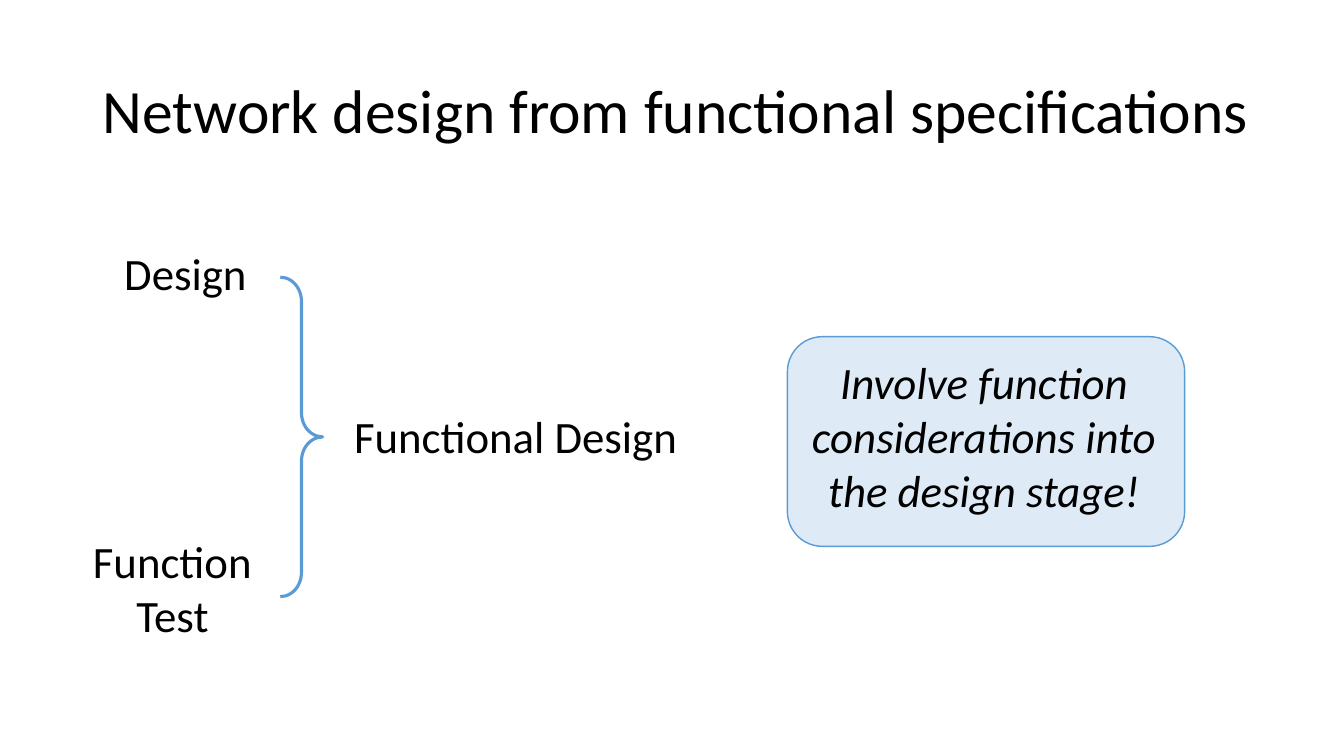
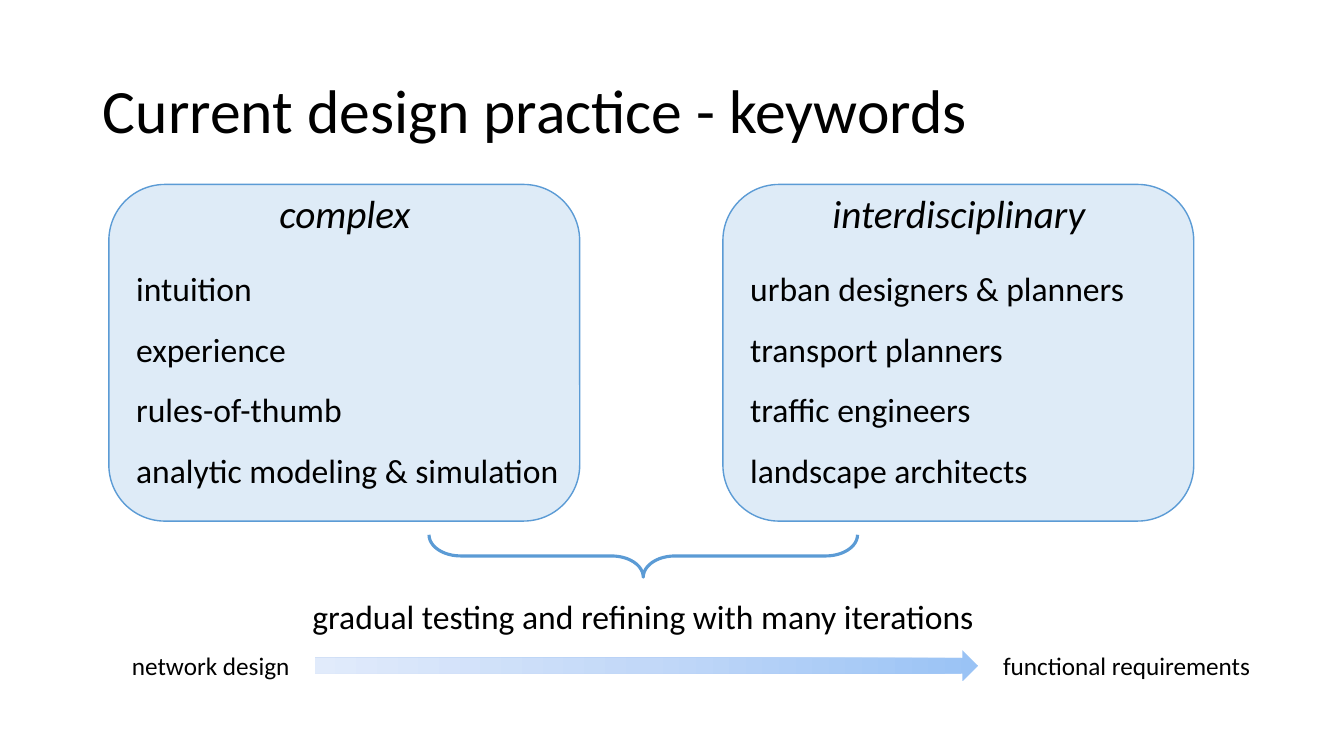
from copy import deepcopy

from pptx import Presentation
from pptx.dml.color import RGBColor
from pptx.enum.shapes import MSO_SHAPE
from pptx.enum.text import MSO_ANCHOR, MSO_AUTO_SIZE, PP_ALIGN
from pptx.oxml.ns import qn
from pptx.oxml.xmlchemy import OxmlElement
from pptx.util import Pt

# Shared scale, colours and formats
PX = 9144  # one hundred px to the inch
LEFT, CENTER = PP_ALIGN.LEFT, PP_ALIGN.CENTER
MIDDLE, TOP = MSO_ANCHOR.MIDDLE, MSO_ANCHOR.TOP
FIXED, GROW = MSO_AUTO_SIZE.NONE, MSO_AUTO_SIZE.SHAPE_TO_FIT_TEXT
ROUNDED, ARROW = MSO_SHAPE.ROUNDED_RECTANGLE, MSO_SHAPE.RIGHT_ARROW
LEFT_BRACE, RIGHT_BRACE = MSO_SHAPE.LEFT_BRACE, MSO_SHAPE.RIGHT_BRACE
TITLE_ONLY, TWO_CONTENT = 5, 3
INK, PALE, BLUE = "000000", "DEEBF7", "5B9BD5"
ARROW_STOPS = ("9AC3F5", "C2D8F8", "E1EBFB")
FONT = "Calibri"

TITLE = {"size": 44, "spacing": 0.9, "align": LEFT}
LABEL = {"size": 32}
REMARK = {"size": 32, "italic": True}
HEADING = {"size": 28, "italic": True}
LIST = {"size": 24, "spacing": 1.5, "align": LEFT}
SUMMARY = {"size": 24, "align": LEFT}
CAPTION = {"size": 18, "align": LEFT}


def color(value):
    return RGBColor.from_string(value)


def emu(*lengths):
    return [length * PX for length in lengths]


def place(shape, box):
    for name, value in zip(("left", "top", "width", "height"), emu(*box)):
        setattr(shape, name, value)


def write(shape, lines, size, italic=False, spacing=1.0, align=CENTER,
          anchor=TOP, fit=GROW, wrap=True, plain=False):
    """Fill a shape with one paragraph a line; plain removes list bullets."""
    frame = shape.text_frame
    frame.text = "\n".join(lines)
    for name, value in {"word_wrap": wrap, "auto_size": fit,
                        "vertical_anchor": anchor}.items():
        setattr(frame, name, value)
    for para in frame.paragraphs:
        if plain:
            properties = para._p.get_or_add_pPr()
            properties.set("marL", "0")
            properties.set("indent", "0")
            properties.append(OxmlElement("a:buNone"))
        for name, value in {"alignment": align, "line_spacing": spacing,
                            "space_before": Pt(0)}.items():
            setattr(para, name, value)
        for span in para.runs:
            for name, value in {"name": FONT, "size": Pt(size),
                                "italic": italic}.items():
                setattr(span.font, name, value)
            span.font.color.rgb = color(INK)


def add_text(shapes, box, lines, style, wrap=True):
    write(shapes.add_textbox(*emu(*box)), lines, wrap=wrap, **style)


def add_page(deck, layout, title):
    page = deck.slides.add_slide(deck.slide_layouts[layout])
    for holder in list(page.placeholders):
        if holder.placeholder_format.idx >= 10:
            holder.element.getparent().remove(holder.element)
    place(page.shapes.title, (92, 40, 1192, 145))
    write(page.shapes.title, [title], anchor=MIDDLE, fit=FIXED, **TITLE)
    return page


def add_card(shapes, box):
    card = shapes.add_shape(ROUNDED, *emu(*box))
    card.shadow.inherit = False
    card.fill.solid()
    card.fill.fore_color.rgb = color(PALE)
    card.line.color.rgb = color(BLUE)
    card.line.width = Pt(1)


def add_brace(shapes, kind, box, curve, rotation=0):
    brace = shapes.add_shape(kind, *emu(*box))
    brace.shadow.inherit = False
    brace.adjustments[0] = curve
    brace.rotation = rotation
    brace.fill.background()
    brace.line.color.rgb = color(BLUE)
    brace.line.width = Pt(2.25)


def add_arrow(shapes, box):
    arrow = shapes.add_shape(ARROW, *emu(*box))
    arrow.shadow.inherit = False
    arrow.line.fill.background()
    arrow.fill.gradient()
    arrow.fill.gradient_angle = 180
    # Third gradient stop, halfway
    first = arrow.element.spPr.find(".//" + qn("a:gs"))
    first.addnext(deepcopy(first))
    for index, (stop, value) in enumerate(
            zip(arrow.fill.gradient_stops, ARROW_STOPS)):
        stop.position = index / 2
        stop.color.rgb = color(value)


def add_remark(page, box, line):
    left, top, width, height = box
    group = page.shapes.add_group_shape()
    add_card(group.shapes, box)
    add_text(group.shapes, (left + 1, top + 13, width - 6, height - 14),
             [line], REMARK)


def add_keywords(page, body, box, heading, lines):
    left, top, width, height = box
    add_card(page.shapes, box)
    add_text(page.shapes, (left + 66, top, 336, 57), [heading], HEADING)
    # The list goes in front of its card
    place(body, (left + 17, top + 58, width, 252))
    body.element.getparent().append(body.element)
    write(body, lines, plain=True, **LIST)


def add_process(page, box):
    """Brace, summary and arrow between the two ends of the process."""
    left, top, width, height = box
    shapes = page.shapes
    # Turned a quarter, so the frame stands upright around its centre
    add_brace(shapes, LEFT_BRACE, (left + 496, top - 192, 42, 425), 0.748, 270)
    add_text(shapes, (left + 179, top + 55, 683, 50),
             ["gradual testing and refining with many iterations"],
             SUMMARY, wrap=False)
    row = top + 109
    add_text(shapes, (left, row, 178, 40), ["network design"],
             CAPTION, wrap=False)
    add_arrow(shapes, (left + 191, row + 5, 658, 31))
    add_text(shapes, (left + width - 268, row, 268, 40),
             ["functional requirements"], CAPTION, wrap=False)


def add_merge(page, box):
    """Two stages joined by a brace into one."""
    left, top, width, height = box
    shapes = page.shapes
    add_text(shapes, (left + 26, top, 156, 64), ["Design"], LABEL)
    add_text(shapes, (left, top + height - 118, 182, 118),
             ["Function", "Test"], LABEL)
    add_brace(shapes, RIGHT_BRACE, (left + 198, top + 36, 42, 317), 0.573)
    add_text(shapes, (left + width - 361, top + 162, 361, 64),
             ["Functional Design"], LABEL)


def build_specifications(deck):
    page = add_page(deck, TITLE_ONLY,
                    "Network design from functional specifications")
    add_merge(page, (80, 239, 612, 404))
    add_remark(page, (781, 334, 394, 208),
               "Involve function considerations into the design stage!")


def build_keywords(deck):
    page = add_page(deck, TWO_CONTENT, "Current design practice - keywords")
    columns = (
        ("complex", ["intuition", "experience", "rules-of-thumb",
                     "analytic modeling & simulation"]),
        ("interdisciplinary", ["urban designers & planners",
                               "transport planners", "traffic engineers",
                               "landscape architects"]),
    )
    bodies = [page.placeholders[1], page.placeholders[2]]
    for index, (heading, lines) in enumerate(columns):
        add_keywords(page, bodies[index], (108 + index * 609, 183, 467, 334),
                     heading, lines)
    add_process(page, (121, 531, 1132, 149))


def main():
    deck = Presentation()
    deck.slide_width, deck.slide_height = emu(1333, 750)
    build_specifications(deck)
    build_keywords(deck)
    deck.save("out.pptx")


if __name__ == "__main__":
    main()
